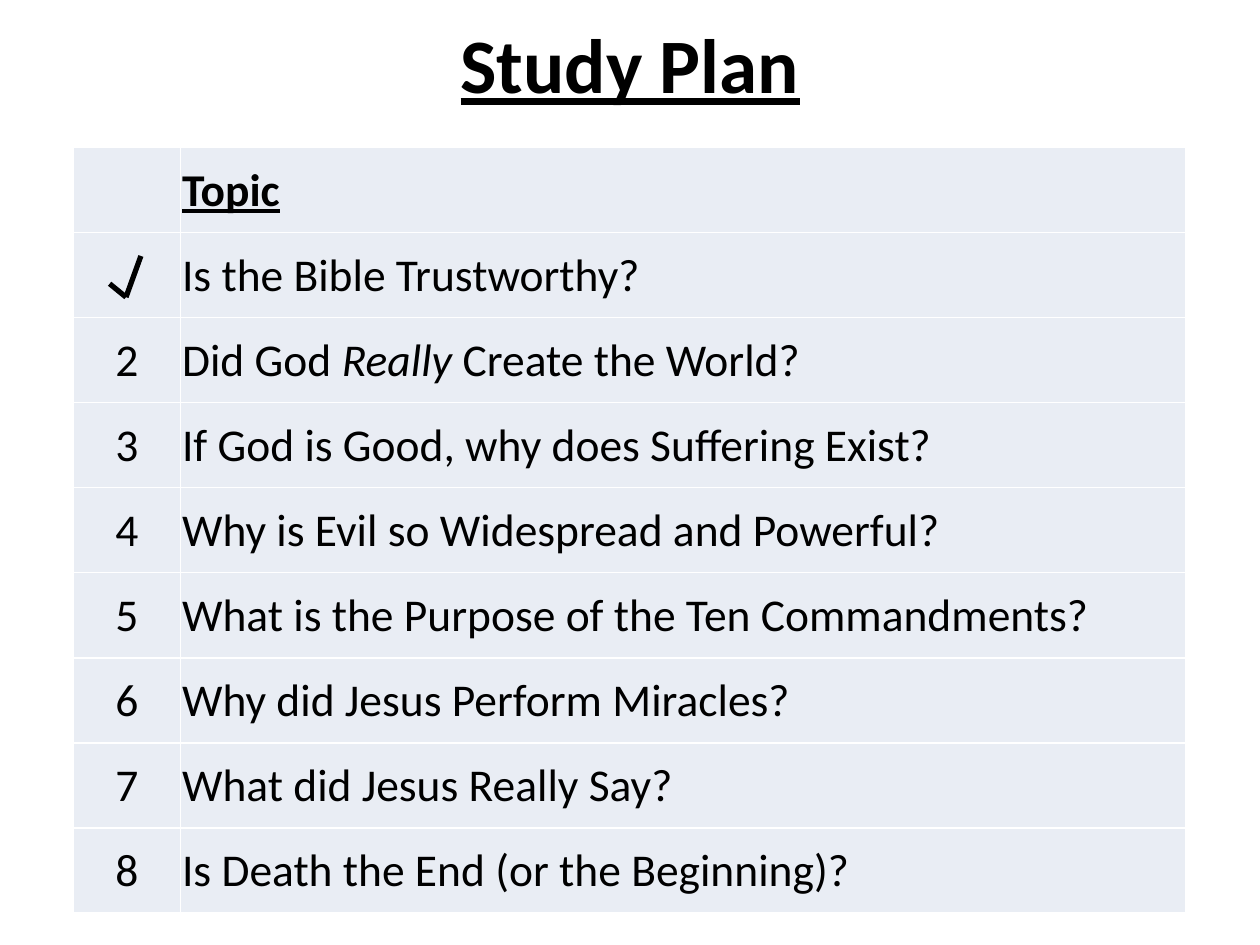
from itertools import pairwise

from lxml import etree
from pptx import Presentation
from pptx.dml.color import RGBColor
from pptx.enum.shapes import MSO_CONNECTOR
from pptx.enum.text import MSO_ANCHOR, PP_ALIGN
from pptx.oxml.ns import qn
from pptx.util import Cm, Pt

LEFT, CENTER = PP_ALIGN.LEFT, PP_ALIGN.CENTER
MIDDLE = MSO_ANCHOR.MIDDLE
STRAIGHT = MSO_CONNECTOR.STRAIGHT

TOPICS = [
    "Is the Bible Trustworthy?",
    ("Did God ", "Really ", "Create the World?"),
    "If God is Good, why does Suffering Exist?",
    "Why is Evil so Widespread and Powerful?",
    "What is the Purpose of the Ten Commandments?",
    "Why did Jesus Perform Miracles?",
    "What did Jesus Really Say?",
    "Is Death the End (or the Beginning)?",
]


def color(code):
    return RGBColor.from_string(code)


def write(frame, text, size=26, align=LEFT, bold=False, under=False,
          font="Calibri", ink="000000"):
    para = frame.paragraphs[0]
    para.alignment = align
    parts = (text,) if isinstance(text, str) else text
    for index, part in enumerate(parts):
        run = para.add_run()
        run.text = part
        style = run.font
        style.name, style.size = font, Pt(size)
        style.bold, style.underline = bold, under
        style.italic = index % 2 == 1
        style.color.rgb = color(ink)


class Deck:
    ink, fill, rule = "000000", "E9EDF4", "FFFFFF"

    def __init__(self):
        self.prs = Presentation()
        self.prs.slide_width, self.prs.slide_height = Cm(25.4), Cm(19.05)
        self.slide = self.prs.slides.add_slide(self.prs.slide_layouts[5])

    def title(self, text, left, top, width, height):
        box = self.slide.shapes.title
        box.left, box.top = Cm(left), Cm(top)
        box.width, box.height = Cm(width), Cm(height)
        box.text_frame.vertical_anchor = MIDDLE
        write(box.text_frame, text, size=44, align=CENTER, bold=True, under=True)

    def border(self, cell):
        props = cell._tc.get_or_add_tcPr()
        for index, side in enumerate(("lnL", "lnR", "lnT", "lnB")):
            line = etree.Element(qn(f"a:{side}"), w=str(Pt(1)))
            paint = etree.SubElement(line, qn("a:solidFill"))
            etree.SubElement(paint, qn("a:srgbClr"), val=self.rule)
            props.insert(index, line)

    def table(self, rows, left, top, widths, height):
        frame = self.slide.shapes.add_table(
            len(rows), len(widths), Cm(left), Cm(top), Cm(sum(widths)), Cm(height))
        grid = frame.table
        grid.first_row = grid.horz_banding = False
        for column, width in zip(grid.columns, widths):
            column.width = Cm(width)
        for r, row in enumerate(rows):
            for c, text in enumerate(row):
                cell = grid.cell(r, c)
                cell.fill.solid()
                cell.fill.fore_color.rgb = color(self.fill)
                cell.vertical_anchor = MIDDLE
                cell.margin_left = cell.margin_right = cell.margin_top = Cm(0.03)
                cell.margin_bottom = 0
                self.border(cell)
                if text:
                    write(cell.text_frame, text, align=LEFT if c else CENTER,
                          bold=r == 0, under=r == 0)

    def check(self, points):
        group = self.slide.shapes.add_group_shape()
        for start, end in pairwise(points):
            line = group.shapes.add_connector(
                STRAIGHT, *(Cm(value) for value in start + end))
            line.line.color.rgb = color(self.ink)
            line.line.width = Pt(3)
            etree.SubElement(line._element.spPr, qn("a:effectLst"))


def main():
    deck = Deck()
    deck.title("Study Plan", 6.99, 0, 11.43, 2.54)
    rows = [("", "Topic"), ("", TOPICS[0])]
    rows += [(str(n), topic) for n, topic in enumerate(TOPICS[1:], 2)]
    deck.table(rows, 1.48, 2.97, (2.16, 20.27), 15.44)
    deck.check([(2.21, 5.72), (2.54, 5.99), (2.84, 5.16)])
    deck.prs.save("out.pptx")


if __name__ == "__main__":
    main()
